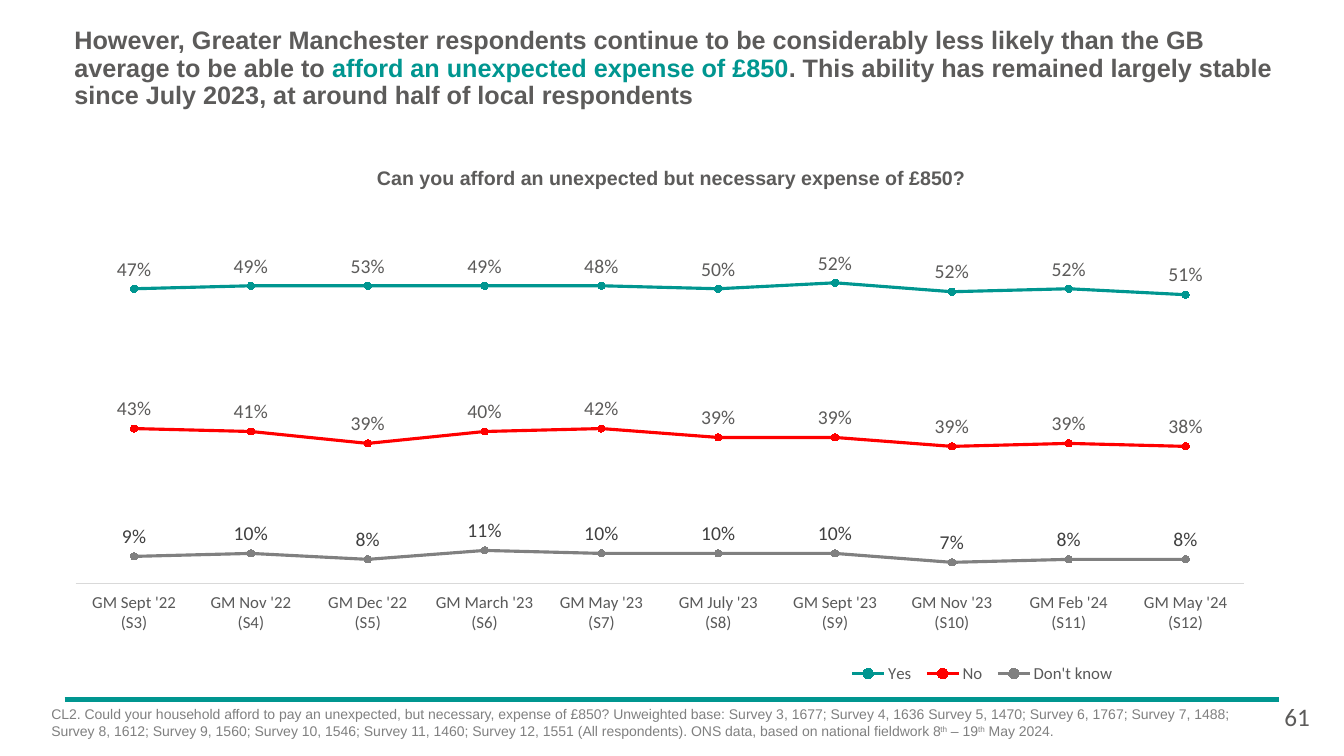
"""Build the slide on affording an unexpected expense, with its stacked line chart."""
from lxml import etree
from pptx import Presentation
from pptx.chart.data import CategoryChartData
from pptx.dml.color import RGBColor
from pptx.enum.chart import XL_CHART_TYPE as CT, XL_LABEL_POSITION as LP
from pptx.enum.chart import XL_LEGEND_POSITION as LEG, XL_MARKER_STYLE as MK
from pptx.enum.chart import XL_TICK_LABEL_POSITION as TLP, XL_TICK_MARK as TM
from pptx.enum.shapes import MSO_CONNECTOR as CONN
from pptx.enum.text import MSO_ANCHOR as ANC, PP_ALIGN as AL
from pptx.oxml.ns import qn
from pptx.util import Inches, Pt

TEAL = RGBColor(0x00, 0x96, 0x90)
RED = RGBColor(0xFF, 0x00, 0x00)
GREY = RGBColor(0x80, 0x80, 0x80)
TEXT = RGBColor(0x5C, 0x5B, 0x5A)
DARK = RGBColor(0x40, 0x40, 0x40)
AXIS_TEXT = RGBColor(0x59, 0x59, 0x59)
AXIS_LINE = RGBColor(0xD9, 0xD9, 0xD9)
BLACK = RGBColor(0x00, 0x00, 0x00)

prs = Presentation()
prs.slide_width, prs.slide_height = Inches(13.33), Inches(7.5)
COL, ROW = prs.slide_width / 100, prs.slide_height / 100
s = prs.slides.add_slide(prs.slide_layouts[6])


def add_text(x, y, w, h, runs, size, color, font="Arial", bold=False):
    """Add a wrapped one-paragraph box from (text, colour, baseline) runs."""
    sp = s.shapes.add_textbox(int(x * COL), int(y * ROW), int(w * COL), int(h * ROW))
    tf = sp.text_frame
    tf.word_wrap = True
    p = tf.paragraphs[0]
    p.font.size, p.font.name, p.font.bold = Pt(size), font, bold
    p.font.color.rgb = color
    for text, run_color, baseline in runs:
        r = p.add_run()
        r.text = text
        if run_color is not None:
            r.font.color.rgb = run_color
        if baseline:
            r._r.get_or_add_rPr().set("baseline", str(baseline * 1000))
    return tf


def set_layout(parent, index, x, y, w, h, inner=False):
    """Place a chart part by shares of the chart's size."""
    for old in parent.findall(qn("c:layout")):
        parent.remove(old)
    layout = etree.Element(qn("c:layout"))
    manual = etree.SubElement(layout, qn("c:manualLayout"))
    target = [("layoutTarget", "inner")] if inner else []
    modes = [("xMode", "edge"), ("yMode", "edge")]
    for tag, val in target + modes + [("x", x), ("y", y), ("w", w), ("h", h)]:
        etree.SubElement(manual, qn(f"c:{tag}")).set("val", str(val))
    parent.insert(index, layout)


rule = s.shapes.add_connector(CONN.STRAIGHT, int(4.8 * COL), int(92.53 * ROW),
                              int(95.2 * COL), int(92.53 * ROW))
rule.line.color.rgb, rule.line.width = TEAL, Pt(3)
etree.SubElement(rule._element.spPr, qn("a:effectLst"))

tf = add_text(4.8, 3.33, 92.42, 11.6, [
    ("However, Greater Manchester respondents continue to be considerably less likely "
     "than the GB average to be able to ", None, 0),
    ("afford an unexpected expense of £850", TEAL, 0),
    (". This ability has remained largely stable since July 2023, at around half of "
     "local respondents", None, 0)], 18, TEXT, bold=True)
tf.vertical_anchor = ANC.MIDDLE
tf.paragraphs[0].line_spacing = 0.9

tf = add_text(13.65, 22, 72.62, 3.2, [
    ("Can you afford an unexpected but necessary expense of £850?", None, 0)],
    14, TEXT, bold=True)
tf.margin_left = tf.margin_top = tf.margin_right = tf.margin_bottom = 0
tf.paragraphs[0].alignment = AL.CENTER

MONTHS = ["Sept '22", "Nov '22", "Dec '22", "March '23", "May '23",
          "July '23", "Sept '23", "Nov '23", "Feb '24", "May '24"]
ANSWERS = [
    ("Don't know", GREY, DARK, [9, 10, 8, 11, 10, 10, 10, 7, 8, 8]),
    ("No", RED, TEXT, [43, 41, 39, 40, 42, 39, 39, 39, 39, 38]),
    ("Yes", TEAL, TEXT, [47, 49, 53, 49, 48, 50, 52, 52, 52, 51]),
]
data = CategoryChartData(number_format="0%")
data.categories = [f"GM {month}\n(S{n})" for n, month in enumerate(MONTHS, 3)]
for name, _, _, percents in ANSWERS:
    data.add_series(name, [v / 100 for v in percents])
chart = s.shapes.add_chart(CT.LINE_MARKERS_STACKED, int(4.73 * COL), int(28 * ROW),
                           int(90.55 * COL), int(64.67 * ROW), data).chart
chart.has_title = False
chart.font.size, chart.font.name = Pt(10), "Calibri"
chart.font.color.rgb = BLACK
plot = chart.plots[0]
plot.vary_by_categories = False

for ser, (_, color, label_color, _) in zip(plot.series, ANSWERS):
    ser.smooth = False
    ser.format.line.color.rgb, ser.format.line.width = color, Pt(2.25)
    ser.marker.style, ser.marker.size = MK.CIRCLE, 5
    ser.marker.format.fill.solid()
    ser.marker.format.fill.fore_color.rgb = color
    ser.marker.format.line.color.rgb = color
    labels = ser.data_labels
    labels.show_value, labels.position = True, LP.ABOVE
    labels.number_format, labels.number_format_is_linked = "0%", False
    labels.font.size, labels.font.name = Pt(14), "Calibri"
    labels.font.color.rgb = label_color

axis = chart.value_axis
axis.minimum_scale, axis.maximum_scale = 0, 1.2
axis.has_major_gridlines = False
axis.visible = False

axis = chart.category_axis
axis.major_tick_mark = axis.minor_tick_mark = TM.NONE
axis.tick_label_position = TLP.LOW
axis.format.line.color.rgb, axis.format.line.width = AXIS_LINE, Pt(0.75)

chart.has_legend = True
legend = chart.legend
legend.position, legend.include_in_layout = LEG.LEFT, False
for font in (axis.tick_labels.font, legend.font):
    font.size, font.name = Pt(12), "Calibri"
    font.color.rgb = AXIS_TEXT
set_layout(legend._element, 1, 0.64, 0.91, 0.23, 0.07)
set_layout(chart._chartSpace.chart.plotArea, 0, 0.01, 0.03, 0.96, 0.73, inner=True)

add_text(3.08, 92.67, 89.87, 7.47, [
    ("CL2. Could your household afford to pay an unexpected, but necessary, expense of "
     "£850? Unweighted base: Survey 3, 1677; Survey 4, 1636 Survey 5, 1470; Survey 6, "
     "1767; Survey 7, 1488; Survey 8, 1612; Survey 9, 1560; Survey 10, 1546; Survey 11, "
     "1460; Survey 12, 1551 (All respondents). ONS data, based on national fieldwork 8",
     None, 0),
    ("th", None, 30), (" – 19", None, 0), ("th", None, 30), (" May 2024.", None, 0)],
    10, GREY)
add_text(94.82, 92.13, 3.98, 5.33, [("61", None, 0)], 18, TEXT, font="Calibri")

prs.save("out.pptx")
